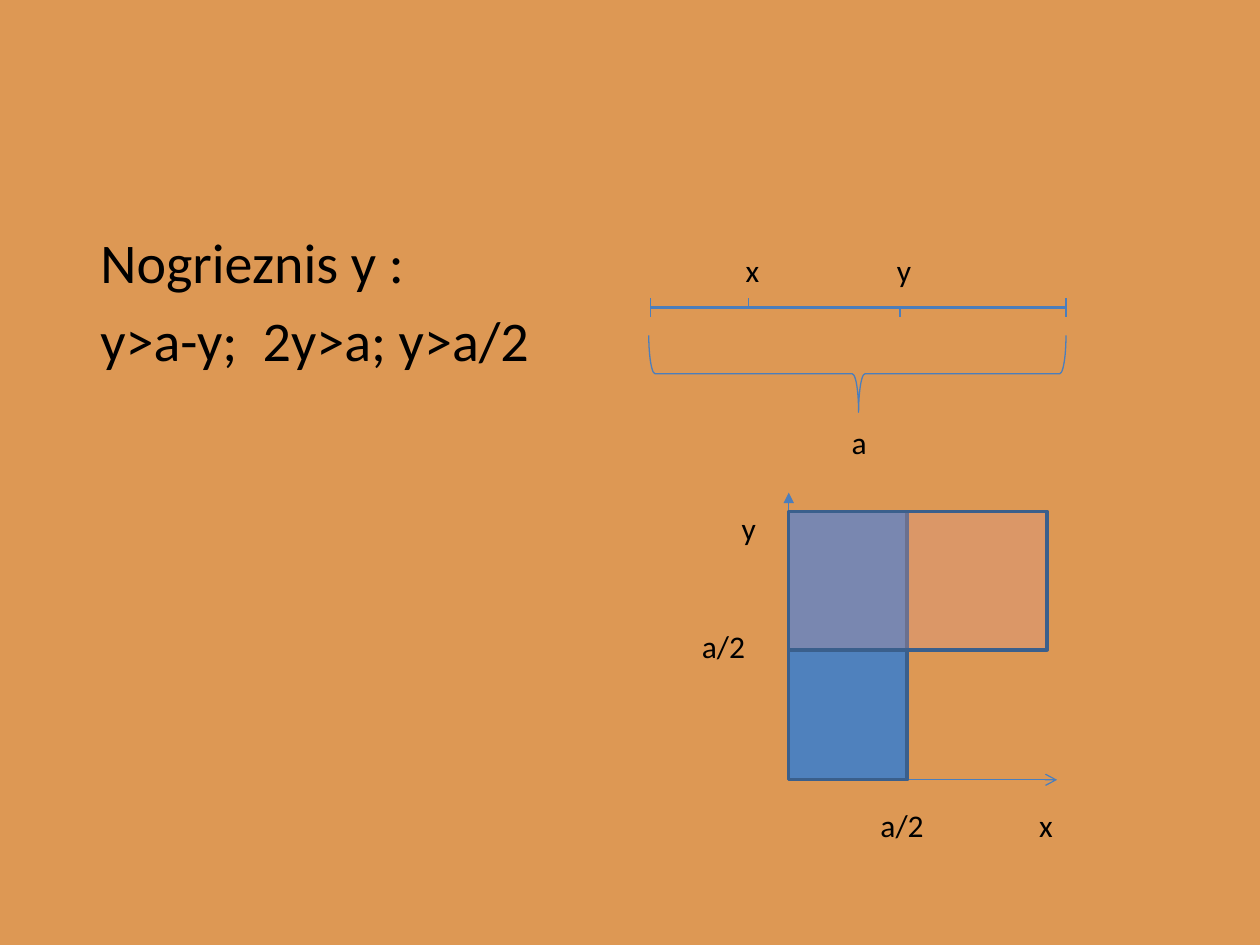
from lxml import etree
from pptx import Presentation
from pptx import util as u
from pptx.dml.color import RGBColor
from pptx.enum import shapes, text
from pptx.oxml.ns import qn

LINE, EDGE, BLACK = "4B7EBC", "3A5F8C", "000000"
THIN, THICK = 0.75, 2


def rgb(value):
    """Turn a hex string into a colour."""
    return RGBColor.from_string(value)


def apply(obj, formats):
    """Set attributes from a dict of format values."""
    for name, value in formats.items():
        setattr(obj, name, value)


def set_line(sp, color, width):
    """Give a shape or connector its line."""
    sp.line.color.rgb = rgb(color)
    sp.line.width = u.Pt(width)


def write(p, words, size):
    """Put one formatted run into a paragraph."""
    r = p.add_run()
    r.text = words
    apply(r.font, {"name": "Calibri", "size": u.Pt(size)})
    r.font.color.rgb = rgb(BLACK)


def add_body(s, lines, box):
    """Fill the body placeholder with unbulleted lines."""
    sp = s.placeholders[1]
    apply(sp, dict(zip(("left", "top", "width", "height"), map(u.Cm, box))))
    tf = sp.text_frame
    for i, words in enumerate(lines):
        p = tf.add_paragraph() if i else tf.paragraphs[0]
        write(p, words, 32)
        pPr = p._p.get_or_add_pPr()
        pPr.set("marL", str(u.Cm(0.5)))
        pPr.set("indent", "0")
        etree.SubElement(pPr, qn("a:buNone"))


def add_label(group, words, x, y, width):
    """Add a small text label."""
    sp = group.shapes.add_textbox(*map(u.Cm, (x, y, width, 0.95)))
    tf = sp.text_frame
    apply(tf, {"word_wrap": True, "auto_size": text.MSO_AUTO_SIZE.SHAPE_TO_FIT_TEXT})
    write(tf.paragraphs[0], words, 18)


def add_line(group, x1, y1, x2, y2, width=THIN, head=None):
    """Add a straight line, with an arrowhead at its end if named."""
    sp = group.shapes.add_connector(
        shapes.MSO_CONNECTOR.STRAIGHT, *map(u.Cm, (x1, y1, x2, y2)))
    set_line(sp, LINE, width)
    if head:
        etree.SubElement(sp.line._get_or_add_ln(), qn("a:tailEnd"), type=head)
    etree.SubElement(sp._element.spPr, qn("a:effectLst"))


def add_area(group, x, y, width, height, color, alpha=100):
    """Add an outlined rectangle with a fill of the given opacity."""
    sp = group.shapes.add_shape(
        shapes.MSO_SHAPE.RECTANGLE, *map(u.Cm, (x, y, width, height)))
    sp.shadow.inherit = False
    sp.fill.solid()
    sp.fill.fore_color.rgb = rgb(color)
    if alpha < 100:
        clr = sp._element.spPr.find(qn("a:solidFill"))[0]
        etree.SubElement(clr, qn("a:alpha"), val=str(alpha * 1000))
    set_line(sp, EDGE, THICK)


def add_brace(group, x, y, width, height):
    """Add a brace that opens upwards."""
    sp = group.shapes.add_shape(
        shapes.MSO_SHAPE.LEFT_BRACE, *map(u.Cm, (x, y, width, height)))
    sp.shadow.inherit = False
    sp.rotation = 270
    sp.adjustments[0], sp.adjustments[1] = 0.083, 0.503
    sp.fill.background()
    set_line(sp, LINE, THIN)


def add_graph(s):
    """Draw the axes and the two overlapping areas."""
    group = s.shapes.add_group_shape()
    x0, y0, top = 15.9, 15.72, 10.31
    add_line(group, x0, y0, x0, 9.93, head="triangle")
    add_line(group, x0, y0, 21.31, y0, head="arrow")
    add_label(group, "x", 20.7, 16.13, 0.8)
    add_label(group, "a/2", 17.5, 16.13, 1.6)
    add_area(group, x0, top, 2.39, y0 - top, "4F81BD")
    add_label(group, "y", 14.7, 10.13, 0.8)
    add_area(group, x0, top, 5.21, 2.79, "D99694", 31)
    add_label(group, "a/2", 13.9, 12.52, 1.6)


def add_segment(s):
    """Draw the segment a with its ends, the points x and y and the brace."""
    group = s.shapes.add_group_shape()
    left, right, y, tick = 13.11, 21.49, 6.2, 0.19
    add_line(group, left, y, right, y, THICK)
    for x, up, down in ((15.09, tick, 0), (18.14, 0, tick),
                        (left, tick, tick), (right, tick, tick)):
        add_line(group, x, y - up, x, y + down)
    add_brace(group, 16.51, 3.33, 1.55, 8.41)
    add_label(group, "a", 16.92, 8.41, 0.76)
    add_label(group, "x", 14.78, 4.93, 0.76)
    add_label(group, "y", 17.83, 4.93, 0.61)


def main():
    """Build the slide and save it."""
    prs = Presentation()
    apply(prs, {"slide_width": u.Cm(25.4), "slide_height": u.Cm(19.05)})
    s = prs.slides.add_slide(prs.slide_layouts[1])
    s.background.fill.solid()
    s.background.fill.fore_color.rgb = rgb("DD9854")
    title = s.shapes.title._element
    title.getparent().remove(title)
    add_body(s, ["Nogrieznis y :", "y>a-y;  2y>a; y>a/2"], (1.27, 4.45, 22.86, 12.57))
    add_graph(s)
    add_segment(s)
    prs.save("out.pptx")


if __name__ == "__main__":
    main()
